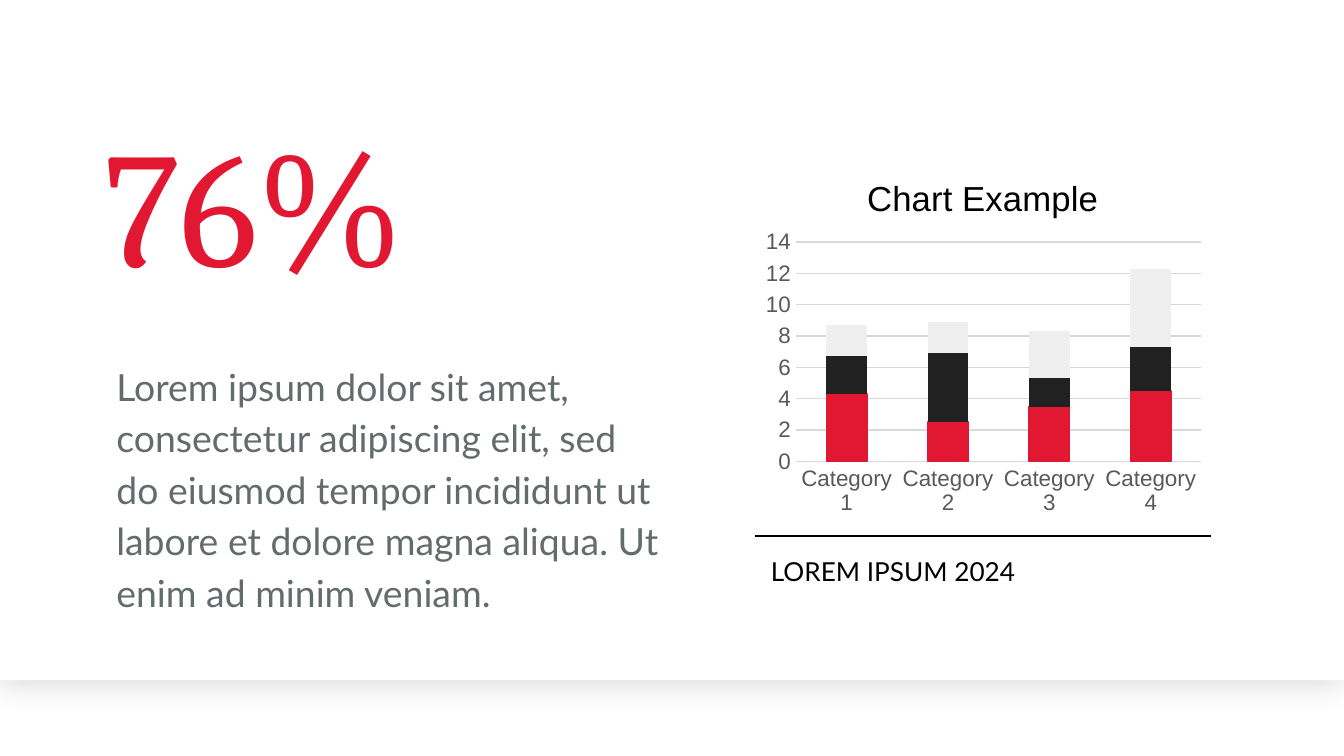
import lxml.etree
import pptx
import pptx.chart.data
import pptx.dml.color
import pptx.enum.chart
import pptx.enum.shapes
import pptx.enum.text
import pptx.oxml
import pptx.oxml.ns
import pptx.util

Cm = pptx.util.Cm
Pt = pptx.util.Pt
qn = pptx.oxml.ns.qn
RED = "E21833"
GRID = "D9D9D9"


def color(code):
    return pptx.dml.color.RGBColor.from_string(code)


def add_text(text, box, size, font="Lato", fill="000000", inset=(0, 0, 0, 0),
             anchor=pptx.enum.text.MSO_ANCHOR.TOP):
    frame = slide.shapes.add_textbox(*[Cm(length) for length in box]).text_frame
    frame.word_wrap = True
    frame.vertical_anchor = anchor
    frame.margin_left, frame.margin_top, frame.margin_right, frame.margin_bottom = [
        Cm(length) for length in inset]
    paragraph = frame.paragraphs[0]
    paragraph.line_spacing = 1.15
    properties = paragraph._p.get_or_add_pPr()
    properties.set("marL", str(Cm(0.3)))
    properties.set("indent", "0")
    run = paragraph.add_run()
    run.text = text
    run.font.size = Pt(size)
    run.font.name = font
    run.font.color.rgb = color(fill)


presentation = pptx.Presentation()
presentation.slide_width = Cm(25.4)
presentation.slide_height = Cm(14.29)
slide = presentation.slides.add_slide(presentation.slide_layouts[6])

panel = slide.shapes.add_shape(
    pptx.enum.shapes.MSO_SHAPE.RECTANGLE, 0, 0, Cm(25.4), Cm(12.86))
panel.fill.solid()
panel.fill.fore_color.rgb = color("FFFFFF")
panel.line.fill.background()
panel.shadow.inherit = False
shadow = lxml.etree.SubElement(
    panel._element.spPr.find(qn("a:effectLst")), qn("a:outerShdw"),
    blurRad=str(Pt(15.8)), dist=str(Pt(3.8)), dir="5400000", rotWithShape="0")
shade = lxml.etree.SubElement(shadow, qn("a:srgbClr"), val="000000")
lxml.etree.SubElement(shade, qn("a:alpha"), val="12000")

divider = slide.shapes.add_connector(
    pptx.enum.shapes.MSO_CONNECTOR.STRAIGHT, Cm(14.27), Cm(10.13), Cm(22.89), Cm(10.13))
divider.line.color.rgb = color("000000")
divider.line.width = Pt(0.75)
lxml.etree.SubElement(divider._element.spPr, qn("a:effectLst"))

add_text("76%", (1.65, 0.97, 9.19, 4.95), 88, font="Cambria", fill=RED,
         inset=(0, 0.25, 0.25, 0.25), anchor=pptx.enum.text.MSO_ANCHOR.BOTTOM)
add_text("Lorem ipsum dolor sit amet, consectetur adipiscing elit, sed do eiusmod "
         "tempor incididunt ut labore et dolore magna aliqua. Ut enim ad minim veniam.",
         (1.65, 6.5, 11.05, 5.61), 20, fill="646B6B", inset=(0.25, 0.25, 0.25, 0.25))
add_text("LOREM IPSUM 2024", (14.27, 10.41, 8.61, 0.79), 14)

series_parts = [
    ("Series 1", (4.3, 2.5, 3.5, 4.5), RED),
    ("Series 2", (2.4, 4.4, 1.8, 2.8), "212121"),
    ("Series 3", (2, 2, 3, 5), "EFEFEF"),
]
data = pptx.chart.data.CategoryChartData()
data.categories = [f"Category {number}" for number in range(1, 5)]
for name, values, fill in series_parts:
    data.add_series(name, values)
chart = slide.shapes.add_chart(
    pptx.enum.chart.XL_CHART_TYPE.COLUMN_STACKED,
    Cm(14.27), Cm(2.92), Cm(8.61), Cm(6.91), data).chart
chart.font.name = "Arial"
chart.font.size = Pt(10)
chart.font.color.rgb = color("000000")
chart.has_legend = False

chart.has_title = True
title = chart.chart_title
title.include_in_layout = False
title_run = title.text_frame.paragraphs[0].add_run()
title_run.text = "Chart Example"
title_run.font.size = Pt(18.6)
title_run.font.bold = False
title_run.font.name = "Arial"
title_run.font.color.rgb = color("000000")

plot = chart.plots[0]
plot.gap_width = 150
plot.overlap = 100
plot.vary_by_categories = False
for series, (name, values, fill) in zip(plot.series, series_parts):
    series.format.fill.solid()
    series.format.fill.fore_color.rgb = color(fill)
    series.format.line.fill.background()
red_line = plot.series[0].format.line
red_line.color.rgb = color(RED)
red_line.width = Pt(0.75)

for axis in (chart.category_axis, chart.value_axis):
    axis.major_tick_mark = pptx.enum.chart.XL_TICK_MARK.NONE
    axis.minor_tick_mark = pptx.enum.chart.XL_TICK_MARK.NONE
    axis.tick_labels.font.size = Pt(12)
    axis.tick_labels.font.name = "Arial"
    axis.tick_labels.font.color.rgb = color("595959")
chart.value_axis.minimum_scale = 0
chart.value_axis.maximum_scale = 14
chart.value_axis.major_unit = 2
chart.value_axis.format.line.fill.background()
for line in (chart.category_axis.format.line, chart.value_axis.major_gridlines.format.line):
    line.color.rgb = color(GRID)
    line.width = Pt(0.75)

plot_area = chart._chartSpace.chart.plotArea
for old_layout in plot_area.findall(qn("c:layout")):
    plot_area.remove(old_layout)
layout = pptx.oxml.parse_xml(
    '<c:layout xmlns:c="http://schemas.openxmlformats.org/drawingml/2006/chart"/>')
plot_area.insert(0, layout)
manual = lxml.etree.SubElement(layout, qn("c:manualLayout"))
for tag, value in (("layoutTarget", "inner"), ("xMode", "edge"), ("yMode", "edge"),
                   ("x", "0.09"), ("y", "0.24"), ("w", "0.89"), ("h", "0.6")):
    lxml.etree.SubElement(manual, qn(f"c:{tag}"), val=value)

presentation.save("out.pptx")
